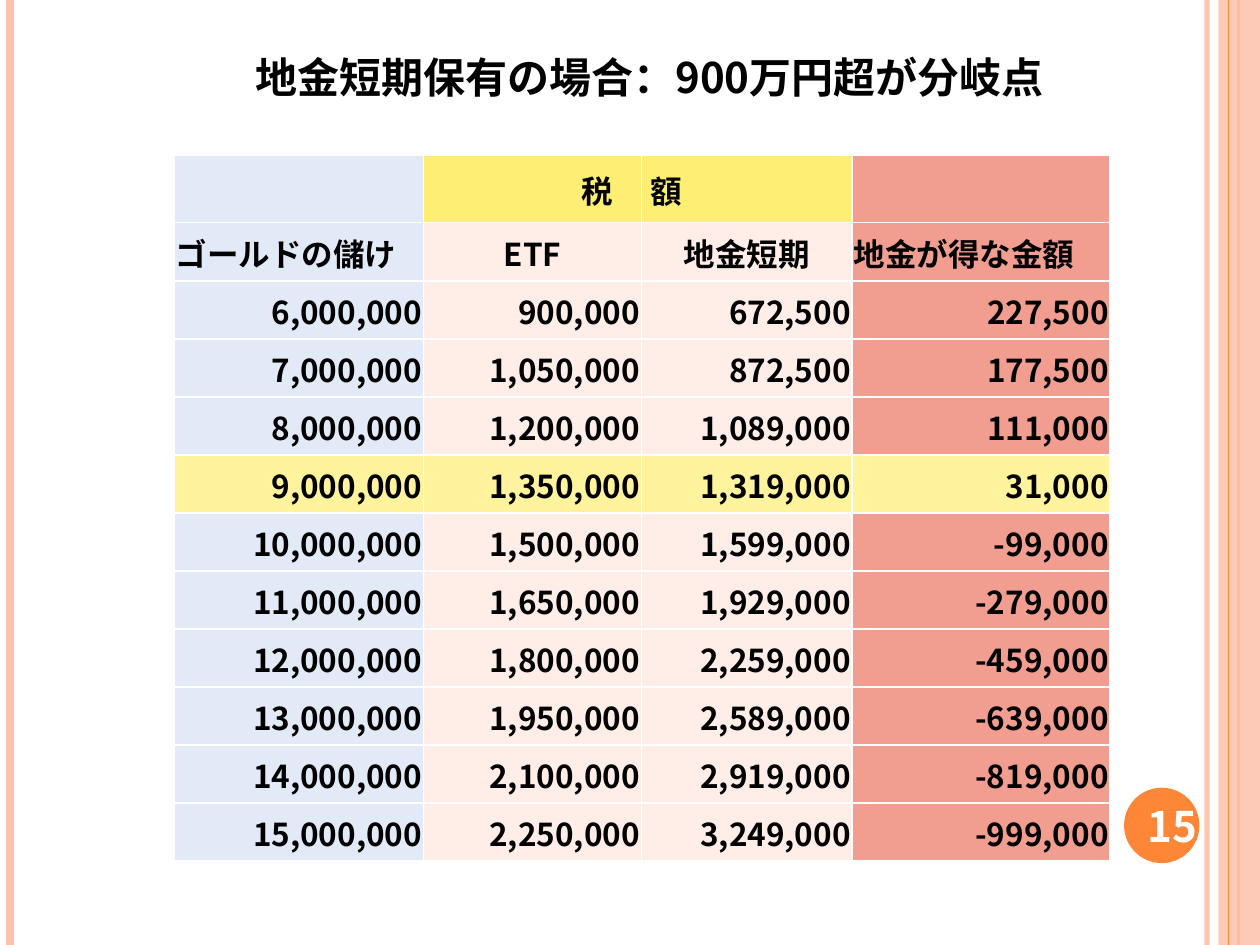
from lxml.etree import SubElement as Sub
from pptx import Presentation as Deck
from pptx.dml.color import RGBColor as Rgb
from pptx.enum.shapes import MSO_CONNECTOR as Link, MSO_SHAPE as Form
from pptx.enum.text import MSO_ANCHOR as Anchor, PP_ALIGN as Align
from pptx.oxml.ns import qn
from pptx.util import Cm, Pt

TITLE = "地金短期保有の場合：900万円超が分岐点"
PAGE = "15"
GROUP = ["", "税", "額", ""]
HEAD = ["ゴールドの儲け", "ETF", "地金短期", "地金が得な金額"]
DATA = [
    (6000000, 900000, 672500, 227500),
    (7000000, 1050000, 872500, 177500),
    (8000000, 1200000, 1089000, 111000),
    (9000000, 1350000, 1319000, 31000),
    (10000000, 1500000, 1599000, -99000),
    (11000000, 1650000, 1929000, -279000),
    (12000000, 1800000, 2259000, -459000),
    (13000000, 1950000, 2589000, -639000),
    (14000000, 2100000, 2919000, -819000),
    (15000000, 2250000, 3249000, -999000),
]
BREAK = 9000000

THEME = {
    "font": "Noto Sans CJK JP",
    "big": 24, "body": 18,
    "ink": "000000", "white": "FFFFFF",
    "peach": "FEC3AE", "orange": "FE8637",
    "cols": ["E3EAF7", "FFEDE8", "FFEDE8", "F19E91"],
    "group": "FFEE74", "mark": "FFF39D",
}

WIDE, HIGH = 25.4, 19.05
BACK = [(24.33, "peach", 3, 93), (0.2, "peach", 4.5, 100), (24.97, "orange", 1.5, 100)]
FRONT = [(24.77, "orange", 0.75, 100)]
LEFT, TOP = 3.51, 3.12
COLS = [5.03, 4.39, 4.25, 5.2]
ROWS = [1.37] + [1.17] * (len(DATA) + 1)
PAD = {"margin_left": Cm(0.03), "margin_right": Cm(0.03),
       "margin_top": Cm(0.03), "margin_bottom": 0, "vertical_anchor": Anchor.MIDDLE}
GROUP_PAD = {1: {"margin_right": Cm(0.58)}, 2: {"margin_left": Cm(0.18)}}
GROUP_SIDE = [Align.LEFT, Align.RIGHT, Align.LEFT, Align.LEFT]
HEAD_SIDE = [Align.LEFT, Align.CENTER, Align.CENTER, Align.LEFT]


def apply(item, form):
    for name, value in form.items():
        setattr(item, name, value)


def paint(fill, tint, alpha=100):
    fill.solid()
    fill.fore_color.rgb = Rgb.from_string(tint)
    if alpha < 100:
        tone = fill._xPr.find(qn("a:solidFill"))[0]
        Sub(tone, qn("a:alpha"), val=str(alpha * 1000))


def write(frame, text, size, tint, side):
    para = frame.paragraphs[0]
    para.alignment = side
    run = para.add_run()
    run.text = text
    apply(run.font, {"name": THEME["font"], "size": Pt(size), "bold": True})
    run.font.color.rgb = Rgb.from_string(tint)
    Sub(run.font._element, qn("a:ea"), typeface=THEME["font"])


def rule(shapes, x, tint, width, alpha):
    line = shapes.add_connector(Link.STRAIGHT, Cm(x), 0, Cm(x), Cm(HIGH))
    line.line.width = Pt(width)
    paint(line.line.fill, THEME[tint], alpha)
    Sub(line._element.spPr, qn("a:effectLst"))


def block(shapes, form, box, tint, alpha=100):
    item = shapes.add_shape(form, *map(Cm, box))
    paint(item.fill, tint, alpha)
    item.line.fill.background()
    item.shadow.inherit = False


def label(shapes, box, text, tint, side, form):
    frame = shapes.add_textbox(*map(Cm, box)).text_frame
    apply(frame, {"word_wrap": True, **form})
    write(frame, text, THEME["big"], tint, side)


def edge(cell):
    props = cell._tc.get_or_add_tcPr()
    for tag in ("lnL", "lnR", "lnT", "lnB"):
        line = Sub(props, qn("a:" + tag), w=str(Pt(1)))
        fill = Sub(line, qn("a:solidFill"))
        Sub(fill, qn("a:srgbClr"), val=THEME["white"])


def shade(row, col):
    if row == 0 and GROUP[col]:
        return THEME["group"]
    if row > 1 and DATA[row - 2][0] == BREAK:
        return THEME["mark"]
    return THEME["cols"][col]


def grid(shapes):
    lines = [GROUP, HEAD] + [[f"{n:,}" for n in line] for line in DATA]
    sides = [GROUP_SIDE, HEAD_SIDE] + [[Align.RIGHT] * len(COLS)] * len(DATA)
    box = map(Cm, (LEFT, TOP, sum(COLS), sum(ROWS)))
    table = shapes.add_table(len(ROWS), len(COLS), *box).table
    apply(table, {"first_row": False, "horz_banding": False})
    for col, width in zip(table.columns, COLS):
        col.width = Cm(width)
    for row, height in zip(table.rows, ROWS):
        row.height = Cm(height)
    for r, line in enumerate(lines):
        for c, text in enumerate(line):
            cell = table.cell(r, c)
            extra = GROUP_PAD.get(c, {}) if r == 0 else {}
            apply(cell, {**PAD, **extra})
            edge(cell)
            paint(cell.fill, shade(r, c))
            if text:
                write(cell.text_frame, text, THEME["body"], THEME["ink"], sides[r][c])


def main():
    deck = Deck()
    apply(deck, {"slide_width": Cm(WIDE), "slide_height": Cm(HIGH)})
    shapes = deck.slides.add_slide(deck.slide_layouts[6]).shapes
    for part in BACK:
        rule(shapes, *part)
    block(shapes, Form.RECTANGLE, (24.56, 0, 0.84, HIGH), THEME["peach"], 87)
    for part in FRONT:
        rule(shapes, *part)
    block(shapes, Form.OVAL, (22.66, 15.88, 1.52, 1.52), THEME["orange"])
    label(shapes, (22.58, 15.93, 2.11, 1.45), PAGE, THEME["white"], Align.CENTER,
          {"vertical_anchor": Anchor.MIDDLE})
    grid(shapes)
    label(shapes, (4.9, 0.91, 18.21, 1.27), TITLE, THEME["ink"], Align.LEFT, {})
    deck.save("out.pptx")


if __name__ == "__main__":
    main()
